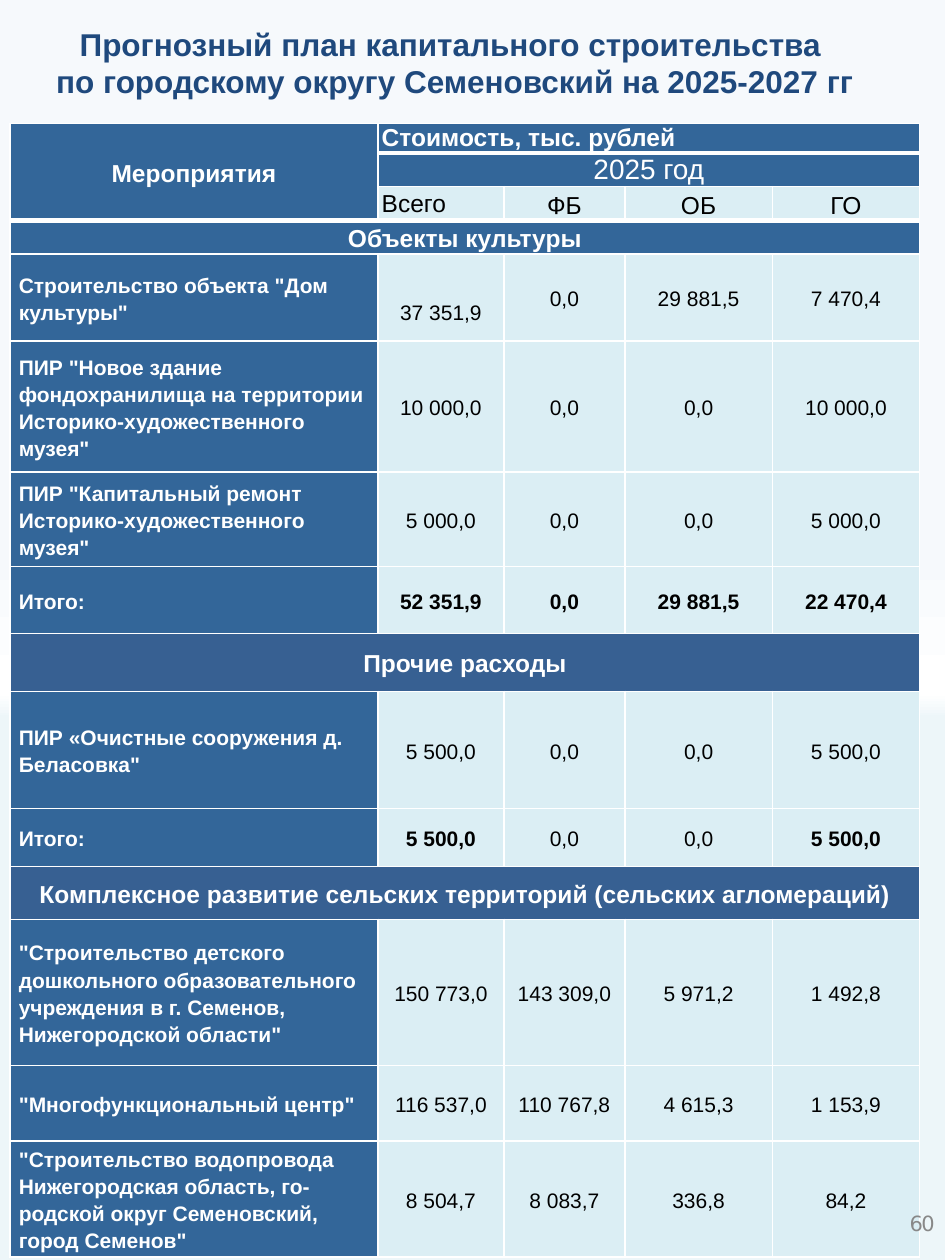
from lxml.etree import SubElement
from pptx import Presentation
from pptx.dml.color import RGBColor
from pptx.enum.text import MSO_ANCHOR, MSO_AUTO_SIZE, PP_ALIGN
from pptx.oxml.ns import qn
from pptx.util import Inches, Pt

BLUE, BAND, PALE = "336699", "376092", "DBEEF4"
WHITE, BLACK = "FFFFFF", "000000"
LEFT, MID = PP_ALIGN.LEFT, PP_ALIGN.CENTER
COLS = [2.92, 1, 0.96, 1.17, 1.17]
HEADS = [0.23, 0.26, 0.24]
ROWS = [
    (0.24, "Объекты культуры"),
    (0.69, "Строительство объекта \"Дом культуры\"", "37 351,9", "0,0", "29 881,5", "7 470,4"),
    (1.04, "ПИР \"Новое здание фондохранилища на территории Историко-художественного музея\"",
     "10 000,0", "0,0", "0,0", "10 000,0"),
    (0.75, "ПИР \"Капитальный ремонт Историко-художественного музея\"",
     "5 000,0", "0,0", "0,0", "5 000,0"),
    (0.53, "Итого:", "52 351,9", "0,0", "29 881,5", "22 470,4"),
    (0.46, "Прочие расходы"),
    (0.93, "ПИР «Очистные сооружения д. Беласовка\"", "5 500,0", "0,0", "0,0", "5 500,0"),
    (0.46, "Итого:", "5 500,0", "0,0", "0,0", "5 500,0"),
    (0.42, "Комплексное развитие сельских территорий (сельских агломераций)"),
    (1.16, "\"Строительство детского дошкольного образовательного учреждения "
     "в г. Семенов, Нижегородской области\"", "150 773,0", "143 309,0", "5 971,2", "1 492,8"),
    (0.6, "\"Многофункциональный центр\"", "116 537,0", "110 767,8", "4 615,3", "1 153,9"),
    (0.87, "\"Строительство водопровода Нижегородская область, го-родской округ "
     "Семеновский, город Семенов\"", "8 504,7", "8 083,7", "336,8", "84,2"),
]
STOPS = [(21, "F6F9FC"), (43, "F6F9FC"), (55, "FFFFFF"), (57, "EDF6F9"), (63, "EDF6F9"), (95, "EDF6F9")]


def color(code):
    """Turn a hex string into a colour."""
    return RGBColor.from_string(code)


def style(para, size, code, bold=False, align=LEFT, face="Arial"):
    """Set the font and alignment of a paragraph."""
    para.alignment = align
    font = para.font
    font.name, font.size, font.bold = face, Pt(size), bold
    font.color.rgb = color(code)


def border(cell, base):
    """Draw white edges round a cell, the bottom one of the given width."""
    props = cell._tc.get_or_add_tcPr()
    for spot, (side, width) in enumerate([("lnL", 1), ("lnR", 1), ("lnT", 1), ("lnB", base)]):
        line = SubElement(props, qn(f"a:{side}"), w=str(Pt(width)))
        fill = SubElement(line, qn("a:solidFill"))
        SubElement(fill, qn("a:srgbClr"), val=WHITE)
        props.remove(line)
        props.insert(spot, line)


def write(cell, text, size, code, bold=False, align=MID, pad=0.07, loose=True):
    """Put styled text in the middle of a cell."""
    cell.text = text
    cell.vertical_anchor = MSO_ANCHOR.MIDDLE
    cell.margin_left = cell.margin_right = Inches(pad)
    para = cell.text_frame.paragraphs[0]
    style(para, size, code, bold, align)
    if loose:
        para.line_spacing, para.space_after = 1.15, Pt(10)


def backdrop(slide):
    """Fill the background with a vertical gradient."""
    fill = slide.background.fill
    fill.gradient()
    fill.gradient_angle = 270
    stops = slide.element.find(".//" + qn("a:gsLst"))
    for stop in list(stops):
        stops.remove(stop)
    for place, code in STOPS:
        stop = SubElement(stops, qn("a:gs"), pos=str(place * 1000))
        SubElement(stop, qn("a:srgbClr"), val=code)


def heading(slide, left, top, width, height):
    """Place the two-line title."""
    title = slide.shapes.title
    title.left, title.top, title.width, title.height = map(Inches, (left, top, width, height))
    frame = title.text_frame
    frame.text = ("Прогнозный план капитального строительства \n"
                  "по городскому округу Семеновский на 2025-2027 гг")
    frame.auto_size = MSO_AUTO_SIZE.SHAPE_TO_FIT_TEXT
    frame.vertical_anchor = MSO_ANCHOR.MIDDLE
    for para in frame.paragraphs:
        style(para, 18, "1F497D", True, MID)
        para.space_before = Pt(0)
        para._p.get_or_add_pPr().set("indent", str(Inches(0.49)))


def header(table):
    """Fill the three header rows."""
    table.cell(0, 0).merge(table.cell(2, 0))
    for row in (0, 1):
        table.cell(row, 1).merge(table.cell(row, 4))
    write(table.cell(0, 0), "Мероприятия", 14, WHITE, True, pad=0.03)
    write(table.cell(0, 1), "Стоимость, тыс. рублей", 14, WHITE, True, LEFT, 0.03, False)
    write(table.cell(1, 1), "2025 год", 16, WHITE, pad=0.03, loose=False)
    write(table.cell(2, 1), "Всего", 14, BLACK, False, LEFT, 0.03, False)
    for col, name in enumerate(["ФБ", "ОБ", "ГО"], 2):
        write(table.cell(2, col), name, 14, BLACK, pad=0.03)


def body(table):
    """Fill the section bands, the works and the totals."""
    for row, (_, name, *sums) in enumerate(ROWS, len(HEADS)):
        first = table.cell(row, 0)
        if not sums:
            first.merge(table.cell(row, len(COLS) - 1))
            write(first, name, 14, WHITE, True)
            continue
        write(first, name, 12, WHITE, True, LEFT)
        total = name == "Итого:"
        for col, value in enumerate(sums, 1):
            bold = total and (value != "0,0" or sums[0] == "52 351,9")
            write(table.cell(row, col), value, 12, BLACK, bold)
    table.cell(4, 1).margin_top = Inches(0.22)


def plan(slide, left, top, width, height):
    """Build the table of construction costs."""
    highs = HEADS + [row[0] for row in ROWS]
    table = slide.shapes.add_table(
        len(highs), len(COLS), *map(Inches, (left, top, width, height))).table
    table.first_row = table.horz_banding = False
    for col, wide in zip(table.columns, COLS):
        col.width = Inches(wide)
    for row, high in zip(table.rows, highs):
        row.height = Inches(high)
    for row in range(len(highs)):
        band = row > len(HEADS) and len(ROWS[row - len(HEADS)]) == 2
        for col in range(len(COLS)):
            cell = table.cell(row, col)
            cell.margin_top = cell.margin_bottom = 0
            cell.fill.solid()
            dark = col == 0 or row < 2
            cell.fill.fore_color.rgb = color(BAND if band else BLUE if dark else PALE)
            thick = row == 2 or (row == 0)
            border(cell, 3 if thick else 1)
    header(table)
    body(table)


def number(slide, left, top, width, height):
    """Place the page number."""
    frame = slide.shapes.add_textbox(*map(Inches, (left, top, width, height))).text_frame
    frame.word_wrap = True
    frame.margin_top = frame.margin_right = frame.margin_bottom = 0
    frame.margin_left = Inches(0.06)
    frame.text = "60"
    para = frame.paragraphs[0]
    para.space_before = Pt(1.6)
    style(para, 12, "888888", face="DejaVu Sans")
    para.runs[0]._r.get_or_add_rPr().set("spc", "-100")


def main():
    """Build and save the slide."""
    deck = Presentation()
    deck.slide_width, deck.slide_height = Inches(7.5), Inches(10)
    slide = deck.slides.add_slide(deck.slide_layouts[5])
    backdrop(slide)
    heading(slide, -0.58, 0.14, 7.89, 0.71)
    plan(slide, 0.08, 0.98, sum(COLS), 8.94)
    number(slide, 7.16, 9.61, 0.31, 0.25)
    deck.save("out.pptx")


if __name__ == "__main__":
    main()
